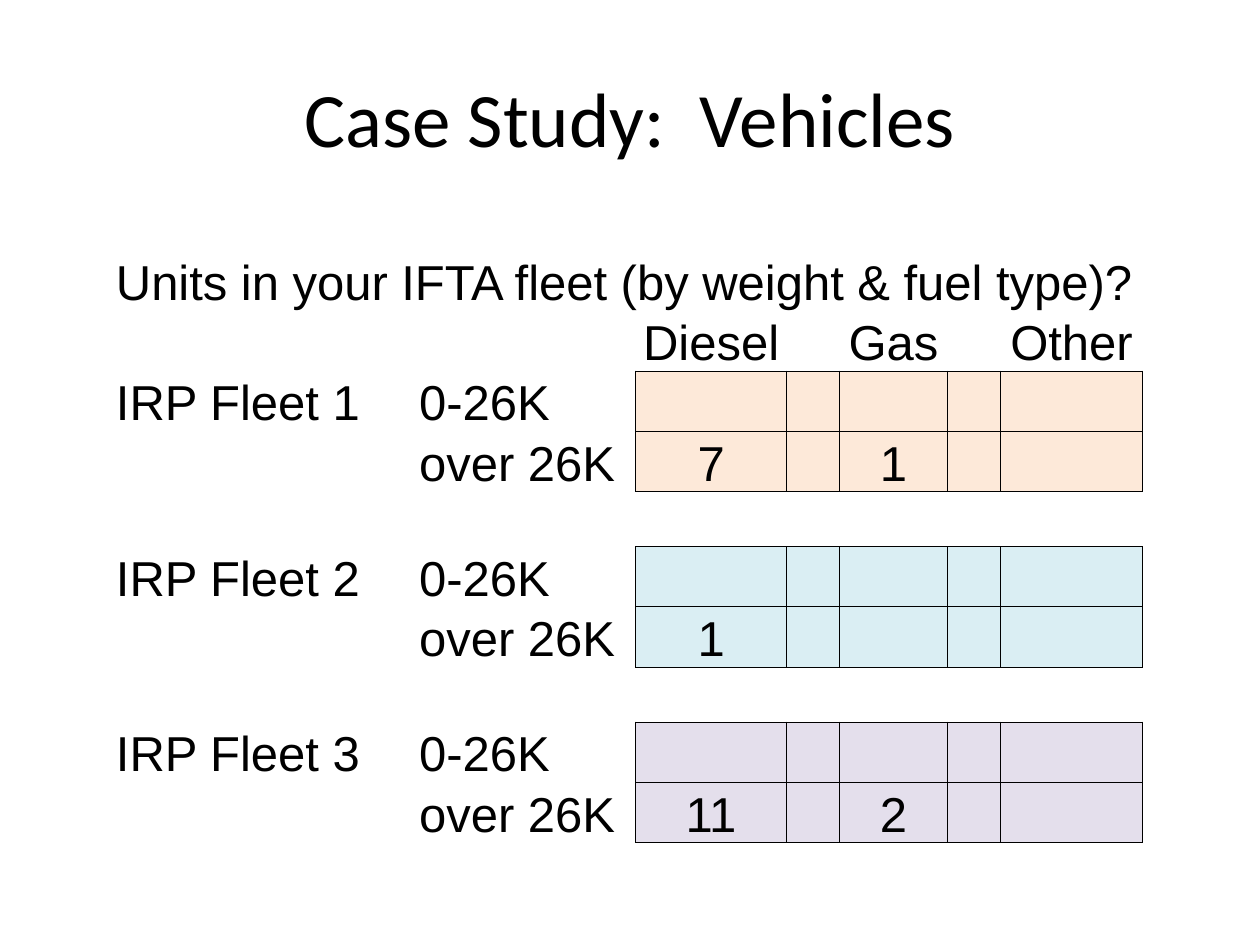
import pptx
import pptx.dml.color
import pptx.enum.text
import pptx.oxml
import pptx.oxml.ns
import pptx.util

RGB = pptx.dml.color.RGBColor
ALIGN = pptx.enum.text.PP_ALIGN
ANCHOR = pptx.enum.text.MSO_ANCHOR

BLACK = RGB(0x00, 0x00, 0x00)
PEACH = RGB(0xFD, 0xE9, 0xD9)
AQUA = RGB(0xDA, 0xEE, 0xF3)
LILAC = RGB(0xE4, 0xDF, 0xEC)

COLS = [2.41, 1.72, 1.2, 0.42, 0.86, 0.42, 1.13]
ROWS = [0.43, 0.48] + [0.48, 0.48, 0.44] * 2 + [0.48, 0.48]
FUELS = {2: "Diesel", 4: "Gas", 6: "Other"}
FLEETS = [
    ("IRP Fleet 1", PEACH, {2: "7", 4: "1"}),
    ("IRP Fleet 2", AQUA, {2: "1"}),
    ("IRP Fleet 3", LILAC, {2: "11", 4: "2"}),
]
SIDES = {"lnL": (0, -1), "lnR": (0, 1), "lnT": (-1, 0), "lnB": (1, 0)}


def put(frame, text, font="Arial", size=28, color=BLACK, align=ALIGN.LEFT):
    """Write one formatted paragraph into a text frame."""
    para = frame.paragraphs[0]
    para.alignment = align
    run = para.add_run()
    run.text = text
    run.font.name = font
    run.font.size = pptx.util.Pt(size)
    run.font.color.rgb = color


def tint(row, col):
    """Return the fleet colour of a count cell, or None elsewhere."""
    fleet, line = divmod(row - 2, 3)
    inside = 0 <= fleet < len(FLEETS) and line < 2 and 2 <= col < len(COLS)
    return FLEETS[fleet][1] if inside else None


def edge(cell, row, col):
    """Rule each side of a cell that touches a count cell."""
    props = cell._tc.get_or_add_tcPr()
    for side, (down, right) in SIDES.items():
        ruled = tint(row, col) or tint(row + down, col + right)
        fill = (f'<a:solidFill><a:srgbClr val="{BLACK}"/></a:solidFill>'
                if ruled else "<a:noFill/>")
        props.append(pptx.oxml.parse_xml(
            f'<a:{side} {pptx.oxml.ns.nsdecls("a")} w="{pptx.util.Pt(0.5)}">'
            f"{fill}</a:{side}>"))


def style(cell, row, col):
    """Set the margins, anchor, borders and fill of a cell."""
    cell.margin_left = cell.margin_right = 0
    cell.margin_top = cell.margin_bottom = 0
    cell.vertical_anchor = ANCHOR.BOTTOM
    edge(cell, row, col)
    color = tint(row, col)
    if color:
        cell.fill.solid()
        cell.fill.fore_color.rgb = color
    else:
        cell.fill.background()


def title(slide, box):
    """Place the centred heading in its box."""
    frame = slide.shapes.add_textbox(*box).text_frame
    frame.word_wrap = True
    frame.vertical_anchor = ANCHOR.MIDDLE
    put(frame, "Case Study:  Vehicles", font="Calibri", size=44,
        align=ALIGN.CENTER)


def units(slide, box):
    """Place the table of units by fleet, weight and fuel in its box."""
    table = slide.shapes.add_table(len(ROWS), len(COLS), *box).table
    table.first_row = table.horz_banding = False
    for col, share in zip(table.columns, COLS):
        col.width = int(box[2] * share / sum(COLS))
    for row, share in zip(table.rows, ROWS):
        row.height = int(box[3] * share / sum(ROWS))
    for row in range(len(ROWS)):
        for col in range(len(COLS)):
            style(table.cell(row, col), row, col)

    def line(row, cells, **fmt):
        """Fill cells of one row from a map of column to text."""
        for col, text in cells.items():
            put(table.cell(row, col).text_frame, text, **fmt)

    table.cell(0, 0).merge(table.cell(0, len(COLS) - 1))
    line(0, {0: "Units in your IFTA fleet (by weight & fuel type)?"})
    line(1, FUELS, align=ALIGN.CENTER)
    for num, (name, _, counts) in enumerate(FLEETS):
        top = 2 + 3 * num
        line(top, {0: name, 1: "0-26K"})
        line(top + 1, {1: "over 26K"})
        line(top + 1, counts, align=ALIGN.CENTER)


def main():
    """Build and save the slide."""
    deck = pptx.Presentation()
    deck.slide_width = pptx.util.Inches(10)
    deck.slide_height = pptx.util.Inches(7.5)
    slide = deck.slides.add_slide(deck.slide_layouts[6])

    def area(left, top, wide, high):
        """Turn shares of the slide into a box."""
        return (int(deck.slide_width * left), int(deck.slide_height * top),
                int(deck.slide_width * wide), int(deck.slide_height * high))

    title(slide, area(0.05, 0.04, 0.9, 1 / 6))
    units(slide, area(0.092, 2 / 7.5, 0.815, 0.62))
    deck.save("out.pptx")


if __name__ == "__main__":
    main()
